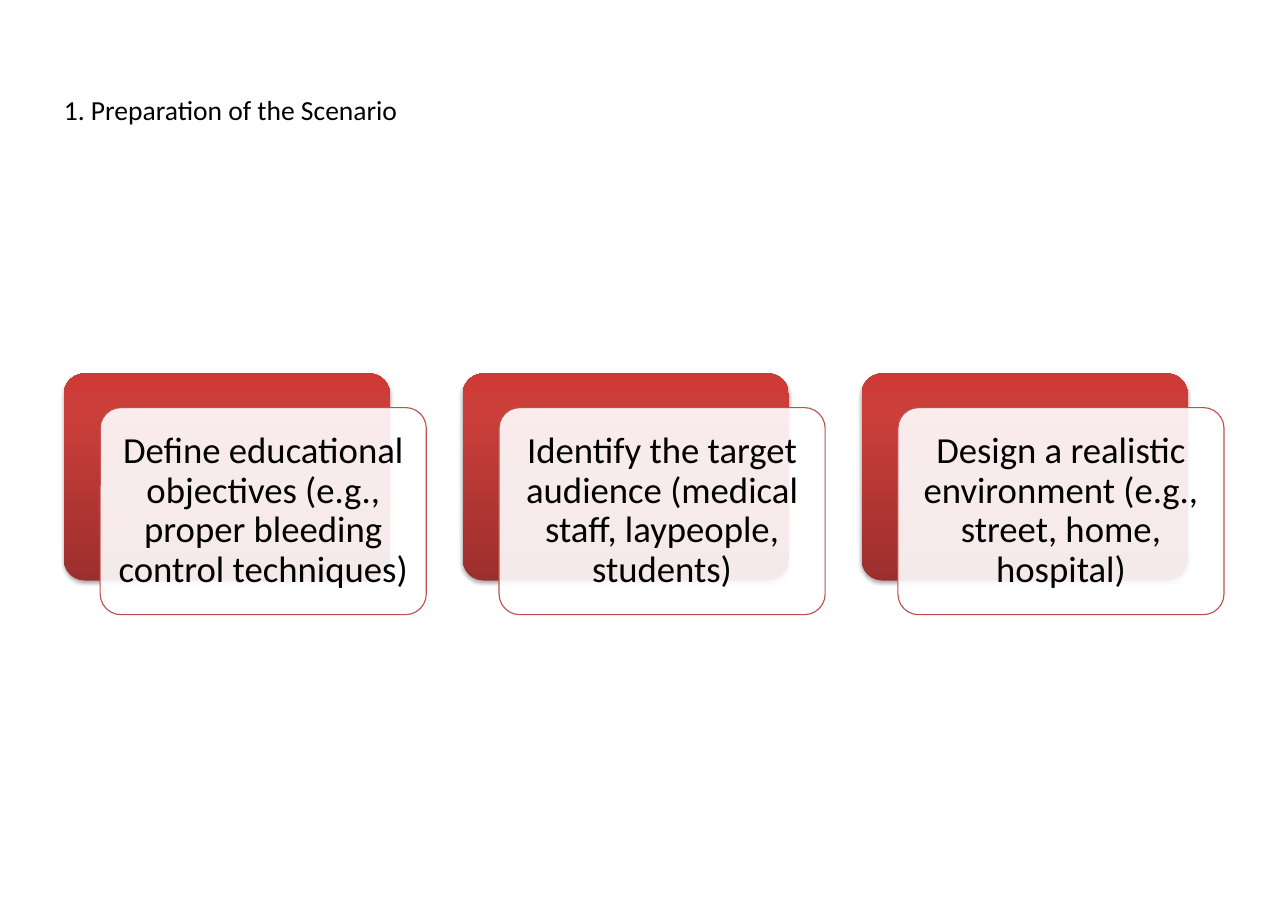
from dataclasses import dataclass

import pptx
import pptx.dml.color
import pptx.enum.shapes
import pptx.enum.text
import pptx.oxml
import pptx.oxml.ns
import pptx.util
from pptx.shapes.autoshape import Shape
from pptx.slide import Slide
from pptx.text.text import TextFrame

Inches = pptx.util.Inches
Pt = pptx.util.Pt
RGBColor = pptx.dml.color.RGBColor

COLOURS = {
    "text": "000000",
    "card": "FFFFFF",
    "outline": "C0504D",
    "dark": "9C2F2D",
    "middle": "CB3E3A",
    "bright": "CE3B37",
}

# Grid in inches: three columns of equal pitch
SLIDE_WIDTH, SLIDE_HEIGHT = 11.69, 8.27
MARGIN = 0.58
COLUMN_PITCH = 3.62
PANEL_WIDTH, PANEL_HEIGHT = 2.96, 1.88
ROW_TOP = 3.39
CARD_SHIFT_X, CARD_SHIFT_Y = 0.33, 0.31
CORNER = 0.1
CARD_INSET = 0.1

TITLE = "1. Preparation of the Scenario"
NAMESPACE = pptx.oxml.ns.nsdecls("a")
GRADIENT_STOPS = ((0, "dark"), (80, "middle"), (100, "bright"))


@dataclass(frozen=True)
class Step:
    column: int
    text: str

    @property
    def left(self) -> float:
        return MARGIN + self.column * COLUMN_PITCH


STEPS = (
    Step(0, "Define educational objectives (e.g., proper bleeding control techniques)"),
    Step(1, "Identify the target audience (medical staff, laypeople, students)"),
    Step(2, "Design a realistic environment (e.g., street, home, hospital)"),
)


def set_attributes(target: object, values: dict) -> None:
    for name, value in values.items():
        setattr(target, name, value)


def write_text(frame: TextFrame, text: str, size: float, inset: float,
               paragraph_format: dict) -> None:
    frame.text = text
    margins = ("margin_left", "margin_top", "margin_right", "margin_bottom")
    set_attributes(frame, {
        "word_wrap": True,
        "auto_size": pptx.enum.text.MSO_AUTO_SIZE.NONE,
        "vertical_anchor": pptx.enum.text.MSO_ANCHOR.MIDDLE,
        **dict.fromkeys(margins, Inches(inset)),
    })
    paragraph = frame.paragraphs[0]
    set_attributes(paragraph, paragraph_format)
    font = paragraph.runs[0].font
    set_attributes(font, {"name": "Calibri", "size": Pt(size)})
    font.color.rgb = RGBColor.from_string(COLOURS["text"])


def add_panel(slide: Slide, left: float, top: float) -> Shape:
    shape = slide.shapes.add_shape(
        pptx.enum.shapes.MSO_SHAPE.ROUNDED_RECTANGLE,
        Inches(left), Inches(top), Inches(PANEL_WIDTH), Inches(PANEL_HEIGHT))
    shape.adjustments[0] = CORNER
    shape.shadow.inherit = False
    return shape


def add_back_panel(slide: Slide, step: Step) -> None:
    shape = add_panel(slide, step.left, ROW_TOP)
    shape.line.fill.background()
    properties = shape._element.spPr

    # Gradient running from the bottom to the top
    stops = "".join(
        f'<a:gs pos="{position * 1000}"><a:srgbClr val="{COLOURS[name]}"/></a:gs>'
        for position, name in GRADIENT_STOPS)
    gradient = pptx.oxml.parse_xml(
        f'<a:gradFill {NAMESPACE} rotWithShape="1"><a:gsLst>{stops}</a:gsLst>'
        '<a:lin ang="16200000" scaled="0"/></a:gradFill>')
    properties.find(pptx.oxml.ns.qn("a:prstGeom")).addnext(gradient)

    # Soft shadow below
    shadow = pptx.oxml.parse_xml(
        f'<a:outerShdw {NAMESPACE} blurRad="{Pt(3.1)}" dist="{Pt(1.8)}" '
        'dir="5400000" rotWithShape="0"><a:srgbClr val="000000">'
        '<a:alpha val="35000"/></a:srgbClr></a:outerShdw>')
    properties.find(pptx.oxml.ns.qn("a:effectLst")).append(shadow)


def add_card(slide: Slide, step: Step) -> None:
    shape = add_panel(slide, step.left + CARD_SHIFT_X, ROW_TOP + CARD_SHIFT_Y)
    shape.fill.solid()
    shape.fill.fore_color.rgb = RGBColor.from_string(COLOURS["card"])
    colour = shape._element.spPr.find(".//" + pptx.oxml.ns.qn("a:srgbClr"))
    colour.append(pptx.oxml.parse_xml(f'<a:alpha {NAMESPACE} val="90000"/>'))
    shape.line.color.rgb = RGBColor.from_string(COLOURS["outline"])
    shape.line.width = Pt(0.75)
    write_text(shape.text_frame, step.text, 24, CARD_INSET, {
        "alignment": pptx.enum.text.PP_ALIGN.CENTER,
        "line_spacing": 0.9,
        "space_after": Pt(8.4),
    })


def add_title(slide: Slide) -> None:
    title = slide.shapes.title
    set_attributes(title, {
        "left": Inches(MARGIN),
        "top": Inches(SLIDE_HEIGHT * 0.04),
        "width": Inches(SLIDE_WIDTH - 2 * MARGIN),
        "height": Inches(SLIDE_HEIGHT * 0.16),
    })
    write_text(title.text_frame, TITLE, 18, 0,
               {"alignment": pptx.enum.text.PP_ALIGN.LEFT})


def main() -> None:
    presentation = pptx.Presentation()
    set_attributes(presentation, {
        "slide_width": Inches(SLIDE_WIDTH),
        "slide_height": Inches(SLIDE_HEIGHT),
    })
    title_only = presentation.slide_layouts.get_by_name("Title Only")
    slide = presentation.slides.add_slide(title_only)
    add_title(slide)
    for step in STEPS:
        add_back_panel(slide, step)
        add_card(slide, step)
    presentation.save("out.pptx")


if __name__ == "__main__":
    main()
